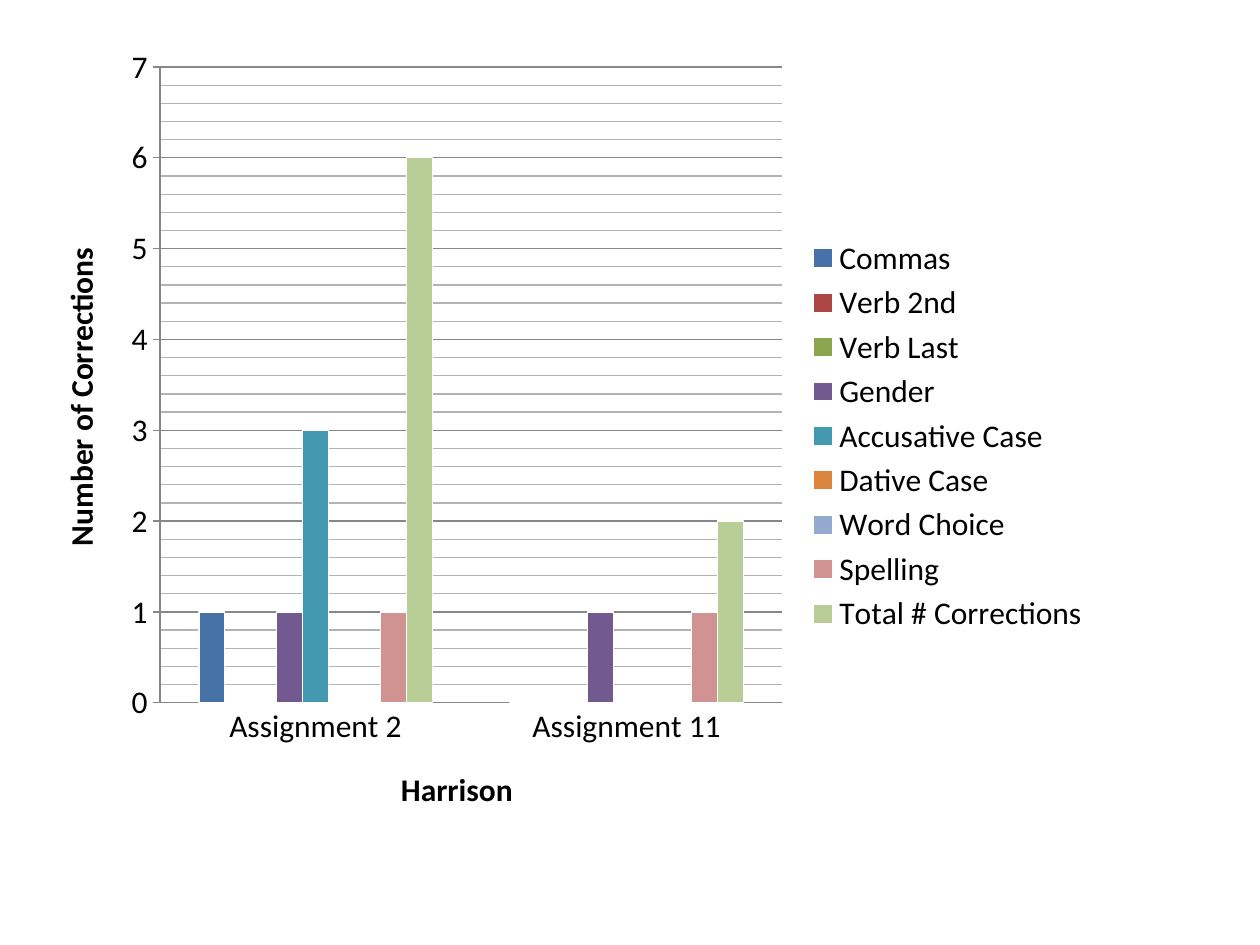
from lxml.etree import SubElement
from pptx import Presentation
from pptx.chart.data import CategoryChartData
from pptx.dml.color import RGBColor
from pptx.enum.chart import XL_CHART_TYPE, XL_LEGEND_POSITION, XL_TICK_MARK
from pptx.oxml.ns import qn
from pptx.util import Inches, Pt

CATEGORIES = ["Assignment 2", "Assignment 11"]
SERIES = [
    ("Commas", (1, 0), "4672A8"),
    ("Verb 2nd", (0, 0), "AB4744"),
    ("Verb Last", (0, 0), "8AA64F"),
    ("Gender", (1, 1), "725990"),
    ("Accusative Case", (3, 0), "4299B0"),
    ("Dative Case", (0, 0), "DC853E"),
    ("Word Choice ", (0, 0), "93A9CF"),
    ("Spelling", (1, 1), "D19392"),
    ("Total # Corrections", (6, 2), "B9CD96"),
]
PLOT_SHARES = {"x": 0.12, "y": 0.044, "w": 0.581, "h": 0.786}


def color(value):
    return RGBColor.from_string(value)


def format_font(font, **values):
    settings = {"name": "Calibri", "size": Pt(18), "bold": False, **values}
    for name, value in settings.items():
        setattr(font, name, value)
    font.color.rgb = color("000000")


def format_line(line, shade):
    line.color.rgb = color(shade)
    line.width = Pt(0.75)


def add_chart(deck, page):
    data = CategoryChartData()
    data.categories = CATEGORIES
    for name, values, shade in SERIES:
        data.add_series(name, values)
    margin = Inches(0.25)
    frame = page.shapes.add_chart(
        XL_CHART_TYPE.COLUMN_CLUSTERED, margin, margin,
        int(deck.slide_width * 0.85), int(deck.slide_height * 0.856), data)
    chart = frame.chart
    chart.has_title = False
    format_font(chart.font)
    return chart


def format_bars(plot):
    plot.gap_width = 300
    plot.overlap = 0
    plot.vary_by_categories = False
    for series, (name, values, shade) in zip(plot.series, SERIES):
        series.format.fill.solid()
        series.format.fill.fore_color.rgb = color(shade)
        format_line(series.format.line, "FFFFFF")


def format_axis(axis, title, tick):
    frame = axis.axis_title.text_frame
    frame.text = title
    format_font(frame.paragraphs[0].runs[0].font, bold=True)
    axis.major_tick_mark = tick
    axis.minor_tick_mark = XL_TICK_MARK.NONE
    format_font(axis.tick_labels.font)
    format_line(axis.format.line, "878787")


def format_scale(axis):
    settings = {"minimum_scale": 0, "maximum_scale": 7, "major_unit": 1,
                "minor_unit": 0.2, "has_major_gridlines": True,
                "has_minor_gridlines": True}
    for name, value in settings.items():
        setattr(axis, name, value)
    format_line(axis.major_gridlines.format.line, "878787")
    format_line(axis.minor_gridlines.format.line, "B3B3B3") if hasattr(axis, "minor_gridlines") else shade_minor_grid(axis)


def shade_minor_grid(axis):
    parent = axis._element.find(qn("c:minorGridlines"))
    for tag, values in (("c:spPr", {}), ("a:ln", {"w": str(Pt(0.75))}),
                        ("a:solidFill", {}), ("a:srgbClr", {"val": "B3B3B3"})):
        parent = SubElement(parent, qn(tag), values)


def add_legend(chart):
    chart.has_legend = True
    chart.legend.position = XL_LEGEND_POSITION.RIGHT
    chart.legend.include_in_layout = False
    format_font(chart.legend.font)


def place_plot(chart):
    area = chart._chartSpace.find(".//" + qn("c:plotArea"))
    for layout in area.findall(qn("c:layout")):
        area.remove(layout)
    layout = SubElement(area, qn("c:layout"))
    area.insert(0, layout)
    manual = SubElement(layout, qn("c:manualLayout"))
    settings = {"layoutTarget": "inner", "xMode": "edge", "yMode": "edge",
                **PLOT_SHARES}
    for name, value in settings.items():
        SubElement(manual, qn("c:" + name), val=str(value))


def main():
    deck = Presentation()
    deck.slide_width, deck.slide_height = Inches(10), Inches(7.5)
    page = deck.slides.add_slide(deck.slide_layouts[6])
    chart = add_chart(deck, page)
    format_bars(chart.plots[0])
    format_axis(chart.category_axis, "Harrison", XL_TICK_MARK.NONE)
    format_axis(chart.value_axis, "Number of Corrections", XL_TICK_MARK.OUTSIDE)
    format_scale(chart.value_axis)
    add_legend(chart)
    place_plot(chart)
    deck.save("out.pptx")


if __name__ == "__main__":
    main()
